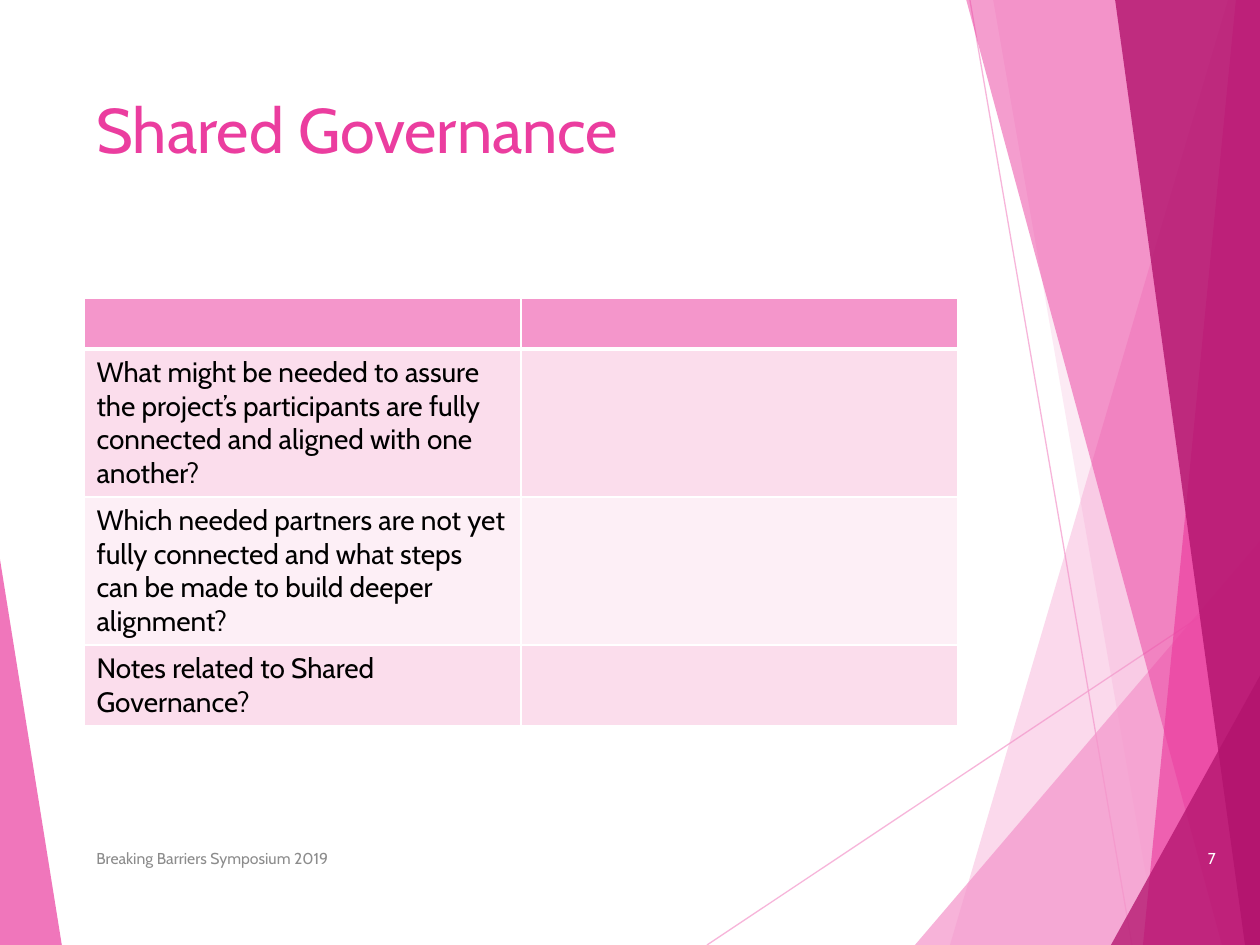
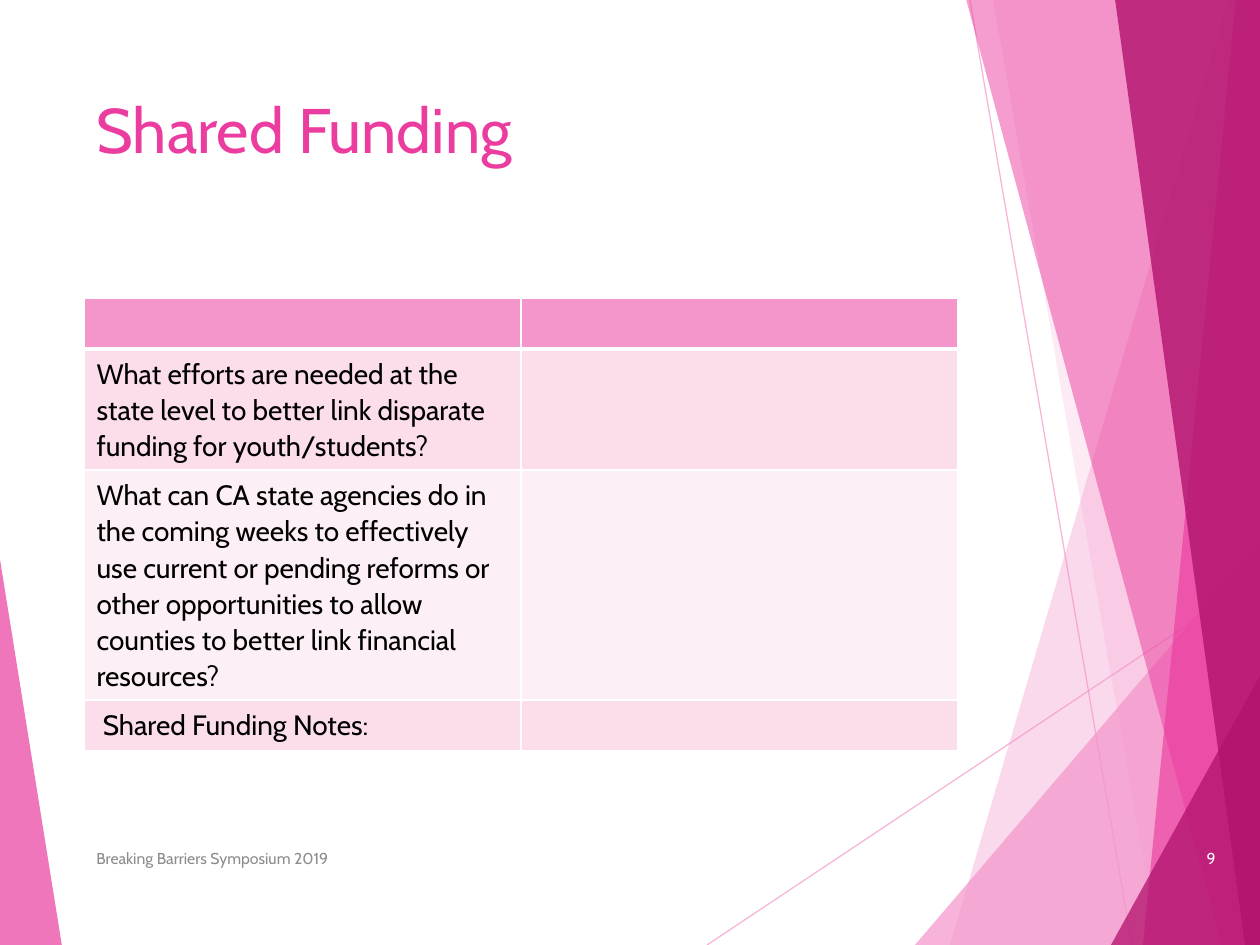
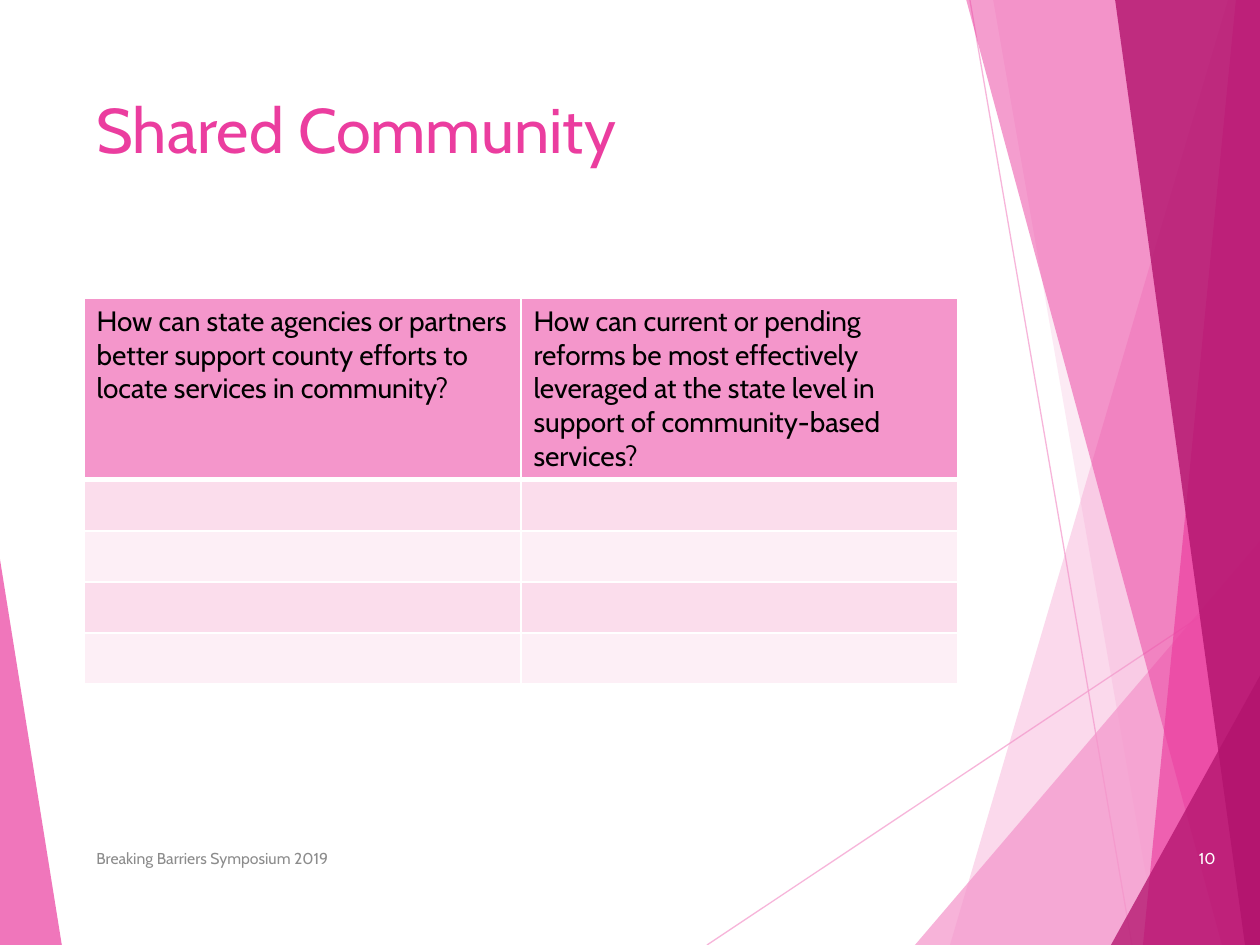
"""Build three symposium worksheet slides with a shared pink faceted backdrop."""
from lxml.etree import SubElement
from pptx import Presentation
from pptx.dml.color import RGBColor
from pptx.enum.shapes import MSO_CONNECTOR
from pptx.enum.text import MSO_ANCHOR, MSO_AUTO_SIZE, PP_ALIGN
from pptx.oxml.ns import qn
from pptx.util import Emu, Pt

PX = 914400 / 126
WIDTH, HEIGHT = 1260, 945
EDGE = WIDTH + 1
FONT = "Cabin"
PINK = RGBColor(0xEB, 0x3D, 0x9F)
LIGHT_PINK = RGBColor(0xF4, 0x96, 0xCB)
DEEP_PINK = RGBColor(0xB2, 0x13, 0x6D)
BAND_DARK = RGBColor(0xFB, 0xDD, 0xEC)
BAND_LIGHT = RGBColor(0xFD, 0xEF, 0xF6)
GREY = RGBColor(0x8C, 0x8C, 0x8C)
BLACK = RGBColor(0x00, 0x00, 0x00)
WHITE = RGBColor(0xFF, 0xFF, 0xFF)

LEFT, CONTENT_WIDTH = 84, 874
TITLE_TOP, TITLE_HEIGHT = 84, 181
TABLE_TOP, ROW_HEIGHT = 298, 51
FOOTER_TOP, FOOTER_HEIGHT = 833, 50
FOOTER_TEXT = "Breaking Barriers Symposium 2019"

RAYS = [((707, 945), (1261, 576)), ((970, 0), (1132, 945))]
FACETS = [
    ([(1228, 0), (950, 945), (EDGE, 946), (EDGE, 0)], LIGHT_PINK, 36),
    ([(993, -1), (1158, 945), (EDGE, 945), (EDGE, -1)], LIGHT_PINK, 20),
    ([(915, 945), (1260, 541), (EDGE, 945)], LIGHT_PINK, 72),
    ([(966, -1), (1222, 945), (EDGE, 945), (EDGE, -1)], PINK, 50),
    ([(1236, -1), (1143, 945), (EDGE, 945), (EDGE, -1)], PINK, 66),
    ([(1115, -1), (1245, 945), (EDGE, 945), (EDGE, -1)], DEEP_PINK, 80),
    ([(1111, 945), (EDGE, 674), (EDGE, 945)], DEEP_PINK, 76),
    ([(-1, 553), (62, 946), (-1, 945)], PINK, 70),
]

PAGES = [
    ("Shared Governance", "7", 425, 1.0, [
        ("", ""),
        ("What might be needed to assure the project’s participants are fully "
         "connected and aligned with one another?", ""),
        ("Which needed partners are not yet fully connected and what steps can "
         "be made to build deeper alignment?", ""),
        ("Notes related to Shared Governance?", ""),
    ]),
    ("Shared Funding", "9", 518, 1.07, [
        ("", ""),
        ("What efforts are needed at the state level to better link disparate "
         "funding for youth/students?", ""),
        ("What can CA state agencies do in the coming weeks to effectively use "
         "current or pending reforms or other opportunities to allow counties "
         "to better link financial resources?", ""),
        (" Shared Funding Notes:", ""),
    ]),
    ("Shared Community", "10", 386, 1.0, [
        ("How can state agencies or partners better support county efforts to "
         "locate services in community?",
         "How can current or pending reforms be most effectively leveraged at "
         "the state level in support of community-based services?"),
        ("", ""), ("", ""), ("", ""), ("", ""),
    ]),
]


def write(frame, text, size=16, color=BLACK, align=PP_ALIGN.LEFT,
          anchor=MSO_ANCHOR.TOP, spacing=1.0):
    frame.word_wrap = True
    frame.vertical_anchor = anchor
    para = frame.paragraphs[0]
    para.alignment = align
    para.line_spacing = spacing
    span = para.add_run()
    span.text = text
    span.font.name = FONT
    span.font.size = Pt(size)
    span.font.color.rgb = color


def fade(shape, percent):
    for color in shape.element.iter(qn("a:srgbClr")):
        SubElement(color, qn("a:alpha")).set("val", str(percent * 1000))


deck = Presentation()
deck.slide_width, deck.slide_height = Emu(round(WIDTH * PX)), Emu(round(HEIGHT * PX))
layout = deck.slide_layouts[5]
pages = [deck.slides.add_slide(layout) for _ in PAGES]

backdrop = []
for start, end in RAYS:
    ray = pages[0].shapes.add_connector(
        MSO_CONNECTOR.STRAIGHT, *(Emu(round(n * PX)) for n in start + end))
    ray.line.color.rgb = LIGHT_PINK
    ray.line.width = Pt(0.75)
    SubElement(ray.element.spPr, qn("a:effectLst"))
    fade(ray, 70)
    backdrop.append(ray)
for points, color, opacity in FACETS:
    outline = pages[0].shapes.build_freeform(*points[0], scale=PX)
    outline.add_line_segments(points[1:], close=True)
    facet = outline.convert_to_shape()
    facet.shadow.inherit = False
    facet.fill.solid()
    facet.fill.fore_color.rgb = color
    facet.line.fill.background()
    fade(facet, opacity)
    backdrop.append(facet)

for holder in list(layout.placeholders)[1:]:
    holder.element.getparent().remove(holder.element)
for shape in backdrop:
    layout.element.cSld.spTree.append(shape.element)

for page, (heading, number, table_height, spacing, rows) in zip(pages, PAGES):
    title = page.shapes.title
    title.left, title.top, title.width, title.height = (
        Emu(round(n * PX)) for n in (LEFT, TITLE_TOP, CONTENT_WIDTH, TITLE_HEIGHT))
    title.text_frame.auto_size = MSO_AUTO_SIZE.NONE
    write(title.text_frame, heading, size=36, color=PINK)

    table_frame = page.shapes.add_table(
        len(rows), 2, *(Emu(round(n * PX))
                        for n in (LEFT, TABLE_TOP, CONTENT_WIDTH, table_height)))
    table = table_frame.table
    table.first_row = table.horz_banding = False
    for row_index, texts in enumerate(rows):
        table.rows[row_index].height = Emu(round(ROW_HEIGHT * PX))
        band = BAND_DARK if row_index % 2 else BAND_LIGHT
        thick_side = {0: "lnB", 1: "lnT"}.get(row_index)
        for column_index, text in enumerate(texts):
            cell = table.cell(row_index, column_index)
            properties = cell._tc.get_or_add_tcPr()
            for side in ("lnL", "lnR", "lnT", "lnB"):
                border = SubElement(properties, qn(f"a:{side}"))
                border.set("w", str(Pt(3 if side == thick_side else 1)))
                paint = SubElement(border, qn("a:solidFill"))
                SubElement(paint, qn("a:srgbClr")).set("val", str(WHITE))
            cell.fill.solid()
            cell.fill.fore_color.rgb = band if row_index else LIGHT_PINK
            if text:
                write(cell.text_frame, text, spacing=spacing)
    table_frame.height = Emu(round(table_height * PX))

    for left, width, text, color, align in (
            (LEFT, 638, FOOTER_TEXT, GREY, PP_ALIGN.LEFT),
            (1157, 71, number, WHITE, PP_ALIGN.RIGHT)):
        box = page.shapes.add_textbox(
            *(Emu(round(n * PX)) for n in (left, FOOTER_TOP, width, FOOTER_HEIGHT)))
        write(box.text_frame, text, size=9, color=color, align=align,
              anchor=MSO_ANCHOR.MIDDLE)

deck.save("out.pptx")
